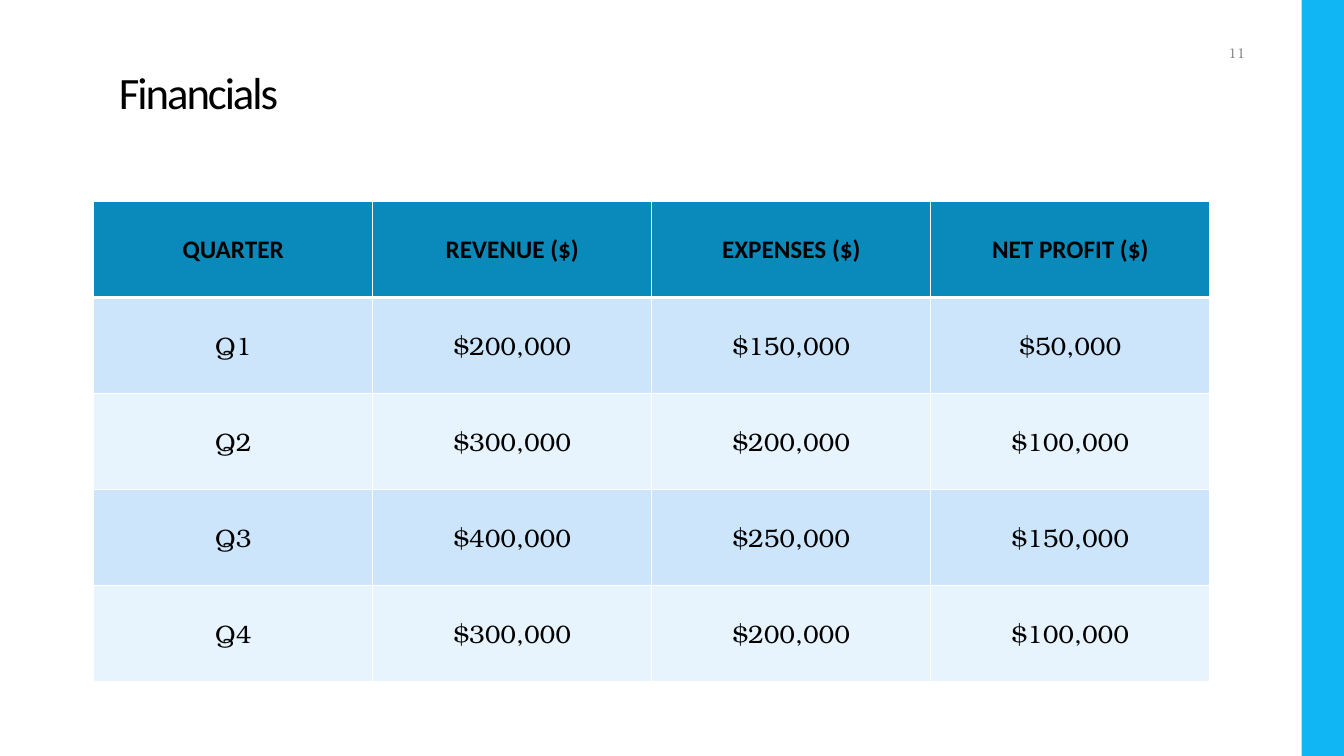
from lxml import etree
from pptx import Presentation
from pptx.dml.color import RGBColor
from pptx.enum.shapes import MSO_SHAPE
from pptx.enum.text import MSO_ANCHOR, MSO_AUTO_SIZE, PP_ALIGN
from pptx.oxml.ns import qn
from pptx.util import Inches, Pt

RECTANGLE = MSO_SHAPE.RECTANGLE
BOTTOM, MIDDLE = MSO_ANCHOR.BOTTOM, MSO_ANCHOR.MIDDLE
LEFT, CENTER, RIGHT = PP_ALIGN.LEFT, PP_ALIGN.CENTER, PP_ALIGN.RIGHT
NO_AUTOFIT = MSO_AUTO_SIZE.NONE

THEME = {
    "heading_font": "Calibri", "body_font": "TeX Gyre Bonum",
    "title_size": 32, "table_size": 18, "number_size": 10,
    "text": "000000", "muted": "8C8C8C", "accent": "10B6F4",
    "header": "098ABA", "bands": ("CCE5FB", "E7F3FD"), "border": "FFFFFF",
}
FINANCIALS = [
    ("QUARTER", "REVENUE ($)", "EXPENSES ($)", "NET PROFIT ($)"),
    ("Q1", "$200,000", "$150,000", "$50,000"),
    ("Q2", "$300,000", "$200,000", "$100,000"),
    ("Q3", "$400,000", "$250,000", "$150,000"),
    ("Q4", "$300,000", "$200,000", "$100,000"),
]


def write(frame, text, font, size, color, align, bold=False):
    frame.text = text
    paragraph = frame.paragraphs[0]
    paragraph.alignment = align
    run_font = paragraph.runs[0].font
    run_font.name, run_font.size, run_font.bold = font, Pt(size), bold
    run_font.color.rgb = RGBColor.from_string(color)


def add_borders(cell, widths):
    properties = cell._tc.get_or_add_tcPr()
    for position, (side, width) in enumerate(widths.items()):
        line = etree.Element(qn("a:ln" + side), w=str(Pt(width)))
        fill = etree.SubElement(line, qn("a:solidFill"))
        etree.SubElement(fill, qn("a:srgbClr"), val=THEME["border"])
        properties.insert(position, line)


# Slide with the content column shared by title and table
presentation = Presentation()
presentation.slide_width, presentation.slide_height = Inches(13.33), Inches(7.5)
slide = presentation.slides.add_slide(presentation.slide_layouts[5])
content_left, content_width = Inches(0.93), Inches(11.07)

# Accent band along the right edge
band_width = Inches(0.42)
accent_band = slide.shapes.add_shape(
    RECTANGLE, presentation.slide_width - band_width, 0,
    band_width, presentation.slide_height)
accent_band.shadow.inherit = False
accent_band.fill.solid()
accent_band.fill.fore_color.rgb = RGBColor.from_string(THEME["accent"])
accent_band.line.fill.background()

# Title
title = slide.shapes.title
title.left, title.top = content_left, 0
title.width, title.height = content_width, Inches(1.43)
heading = title.text_frame
heading.auto_size, heading.vertical_anchor = NO_AUTOFIT, BOTTOM
heading.margin_left = heading.margin_right = Inches(0.25)
heading.margin_top = heading.margin_bottom = Inches(0.25)
write(heading, "Financials", THEME["heading_font"], THEME["title_size"],
      THEME["text"], LEFT)
heading.paragraphs[0].line_spacing = 0.85
heading.paragraphs[0].runs[0].font._element.set("spc", "-150")

# Quarterly results
row_count, column_count = len(FINANCIALS), len(FINANCIALS[0])
results = slide.shapes.add_table(
    row_count, column_count, content_left, Inches(2),
    content_width, Inches(4.76)).table
for row, values in enumerate(FINANCIALS):
    is_header = row == 0
    font = THEME["heading_font" if is_header else "body_font"]
    color = THEME["header"] if is_header else THEME["bands"][(row - 1) % 2]
    widths = {"L": 1, "R": 1, "T": 3 if row == 1 else 1, "B": 3 if is_header else 1}
    for column, value in enumerate(values):
        cell = results.cell(row, column)
        cell.vertical_anchor = MIDDLE
        cell.fill.solid()
        cell.fill.fore_color.rgb = RGBColor.from_string(color)
        write(cell.text_frame, value, font, THEME["table_size"],
              THEME["text"], CENTER, is_header)
        add_borders(cell, widths)

# Page number
page_number = slide.shapes.add_textbox(
    Inches(11.45), Inches(0.35), Inches(1), Inches(0.35)).text_frame
page_number.word_wrap, page_number.vertical_anchor = True, MIDDLE
write(page_number, "11", THEME["body_font"], THEME["number_size"],
      THEME["muted"], RIGHT)

presentation.save("out.pptx")
